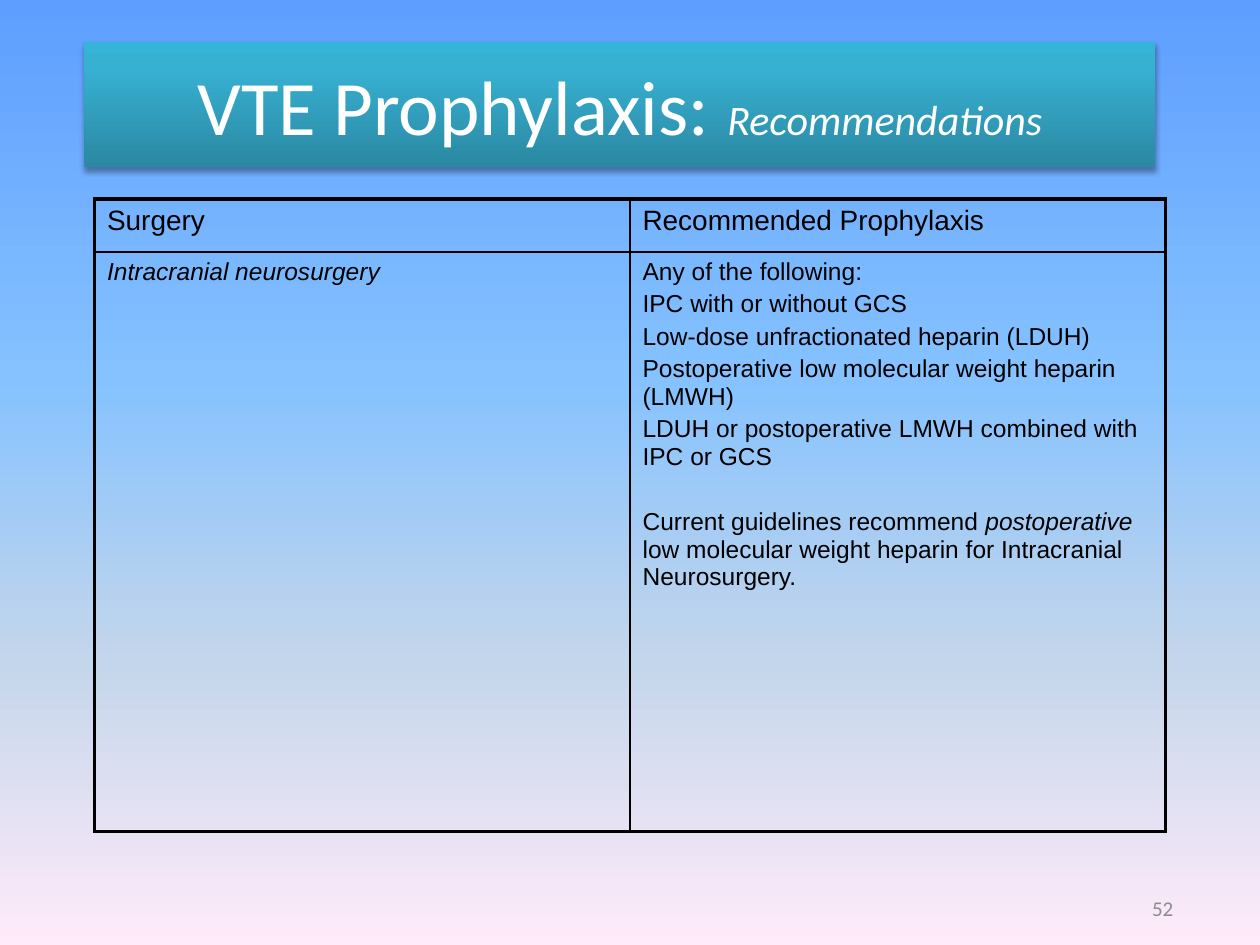
from lxml import etree
from pptx import Presentation
from pptx.dml.color import RGBColor
from pptx.enum.shapes import MSO_SHAPE
from pptx.enum.text import MSO_ANCHOR, PP_ALIGN
from pptx.oxml import parse_xml
from pptx.oxml.ns import nsdecls, qn
from pptx.util import Inches, Pt

RECTANGLE = MSO_SHAPE.RECTANGLE
MIDDLE = MSO_ANCHOR.MIDDLE
CENTER, RIGHT = PP_ALIGN.CENTER, PP_ALIGN.RIGHT
BLACK = RGBColor(0x00, 0x00, 0x00)
WHITE = RGBColor(0xFF, 0xFF, 0xFF)
GRAY = RGBColor(0x8C, 0x8C, 0x8C)
SKY = [(0, RGBColor(0x5E, 0x9E, 0xFF)), (40, RGBColor(0x85, 0xC2, 0xFF)),
       (70, RGBColor(0xC4, 0xD6, 0xEB)), (100, RGBColor(0xFF, 0xEB, 0xFA))]
TEAL = [(0, RGBColor(0x2A, 0x88, 0xA2)), (80, RGBColor(0x37, 0xB1, 0xD2)),
        (100, RGBColor(0x34, 0xB4, 0xD6))]


def set_gradient(fill, owner, stops, angle):
    """Fill with the stops (percent, colour) along a clockwise angle."""
    fill.gradient()
    gradient = owner.find(".//" + qn("a:gradFill"))
    stop_list = gradient.find(qn("a:gsLst"))
    for old_stop in list(stop_list):
        stop_list.remove(old_stop)
    for percent, color in stops:
        stop = etree.SubElement(stop_list, qn("a:gs"), pos=str(percent * 1000))
        etree.SubElement(stop, qn("a:srgbClr"), val=str(color))
    gradient.find(qn("a:lin")).set("ang", str(angle * 60000))


def add_span(para, text, color, **formats):
    """Add a run to the paragraph with the given font values."""
    span = para.add_run()
    span.text = text
    span.font.color.rgb = color
    for name, value in formats.items():
        setattr(span.font, name, value)


deck = Presentation()
deck.slide_width, deck.slide_height = Inches(10), Inches(7.5)
page = deck.slides.add_slide(deck.slide_layouts[6])
set_gradient(page.background.fill, page.element, SKY, 90)

# Slide number
number_box = page.shapes.add_textbox(Inches(4.83), Inches(7.08), Inches(4.58), Inches(0.25))
number_box.text_frame.word_wrap = True
number_box.text_frame.vertical_anchor = MIDDLE
para = number_box.text_frame.paragraphs[0]
para.alignment = RIGHT
add_span(para, "52", GRAY, name="Calibri", size=Pt(12))

# Title banner with a soft shadow
banner = page.shapes.add_shape(RECTANGLE, Inches(0.67), Inches(0.33), Inches(8.5), Inches(1))
set_gradient(banner.fill, banner.element, TEAL, 270)
banner.line.fill.background()
banner.shadow.inherit = False
effects = banner.element.spPr.find(qn("a:effectLst"))
shadow = etree.SubElement(effects, qn("a:outerShdw"), blurRad=str(Pt(3.1)),
                          dist=str(Pt(1.8)), dir="5400000", rotWithShape="0")
shadow_color = etree.SubElement(shadow, qn("a:srgbClr"), val=str(BLACK))
etree.SubElement(shadow_color, qn("a:alpha"), val="35000")
banner.text_frame.word_wrap = True
banner.text_frame.vertical_anchor = MIDDLE
para = banner.text_frame.paragraphs[0]
para.alignment = CENTER
add_span(para, "VTE Prophylaxis: ", WHITE, name="Calibri", size=Pt(44))
add_span(para, "Recommendations", WHITE, name="Calibri", size=Pt(24), italic=True)

# Table text: rows of cells, cells of paragraphs, paragraphs of (text, italic)
ROWS = [
    [[[("Surgery", False)]], [[("Recommended Prophylaxis", False)]]],
    [[[("Intracranial neurosurgery", True)]],
     [[("Any of the following:", False)],
      [("IPC with or without GCS", False)],
      [("Low-dose unfractionated heparin (LDUH)", False)],
      [("Postoperative low molecular weight heparin (LMWH)", False)],
      [("LDUH or postoperative LMWH combined with IPC or GCS", False)],
      [("Current guidelines recommend ", False), ("postoperative", True),
       (" low molecular weight heparin for Intracranial Neurosurgery.", False)]]],
]
ROW_HEIGHTS = [0.42, 4.6]
TEXT_SIZES = [16, 14]
NOTE_GAP = 21.7  # points above the closing note

table = page.shapes.add_table(2, 2, Inches(0.75), Inches(1.58), Inches(8.5), Inches(5.02)).table
table.first_row = table.horz_banding = False
for row_index, row in enumerate(ROWS):
    table.rows[row_index].height = Inches(ROW_HEIGHTS[row_index])
    size = TEXT_SIZES[row_index]
    for column_index, paragraphs in enumerate(row):
        cell = table.cell(row_index, column_index)
        cell.fill.background()
        frame = cell.text_frame
        for para_index, spans in enumerate(paragraphs):
            para = frame.add_paragraph() if para_index else frame.paragraphs[0]
            para.space_before = Pt(NOTE_GAP if len(spans) > 1 else size * 0.2)
            for text, italic in spans:
                add_span(para, text, BLACK, name="Arial", size=Pt(size), italic=italic)

        # Thick lines on the outside, thin lines between cells
        outer_sides = {"L": column_index == 0, "R": column_index == 1,
                       "T": row_index == 0, "B": row_index == 1}
        properties = cell._tc.get_or_add_tcPr()
        for position, (side, outer) in enumerate(outer_sides.items()):
            width = Pt(2.25 if outer else 1)
            properties.insert(position, parse_xml(
                f'<a:ln{side} {nsdecls("a")} w="{width}"><a:solidFill>'
                f'<a:srgbClr val="{BLACK}"/></a:solidFill></a:ln{side}>'))

deck.save("out.pptx")
